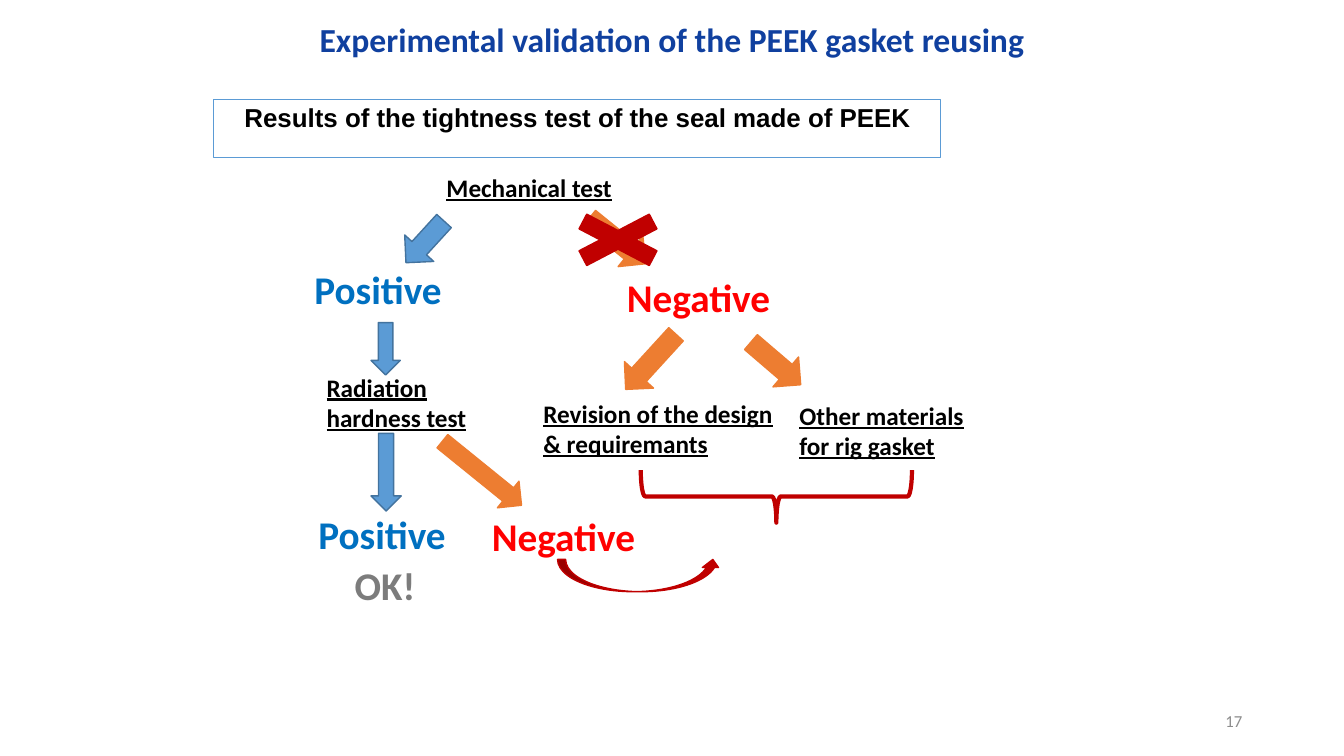
from dataclasses import dataclass

from pptx import Presentation
from pptx.dml.color import RGBColor
from pptx.enum.shapes import MSO_SHAPE
from pptx.enum.text import MSO_ANCHOR, PP_ALIGN
from pptx.util import Inches, Pt

RECT = MSO_SHAPE.RECTANGLE
DOWN = MSO_SHAPE.DOWN_ARROW
BRACE = MSO_SHAPE.RIGHT_BRACE
CURVED = MSO_SHAPE.CURVED_UP_ARROW
CROSS = MSO_SHAPE.MATH_MULTIPLY
LEFT, CENTER, RIGHT = PP_ALIGN.LEFT, PP_ALIGN.CENTER, PP_ALIGN.RIGHT
TOP, MIDDLE = MSO_ANCHOR.TOP, MSO_ANCHOR.MIDDLE


@dataclass(frozen=True)
class Theme:
    body_font: str = "Calibri"
    heading_font: str = "Arial"
    title: str = "10409F"
    black: str = "000000"
    grey: str = "7C7C7C"
    number: str = "8C8C8C"
    positive: str = "0070C0"
    negative: str = "FF0000"
    blue: str = "5B9BD5"
    blue_edge: str = "43739E"
    orange: str = "ED7D31"
    dark_red: str = "C00000"
    title_size: float = 24
    heading_size: float = 18.5
    test_size: float = 18
    result_size: float = 28
    number_size: float = 12


THEME = Theme()


def write(tf, text, size, color, font=THEME.body_font, align=LEFT,
          bold=True, underline=None):
    """Write one paragraph into a text frame and return it."""
    p = tf.paragraphs[0]
    p.alignment = align
    r = p.add_run()
    r.text = text
    r.font.name = font
    r.font.size = Pt(size)
    r.font.bold = bold
    r.font.underline = underline
    r.font.color.rgb = RGBColor.from_string(color)
    return p


def add_text(s, box, text, size, color, anchor=TOP, wrap=True, **style):
    sp = s.shapes.add_textbox(*map(Inches, box))
    tf = sp.text_frame
    tf.word_wrap = wrap
    tf.vertical_anchor = anchor
    return write(tf, text, size, color, **style)


def add_test(s, box, text):
    """Underlined name of a test or action, indented by one level."""
    p = add_text(s, box, text, THEME.test_size, THEME.black, underline=True)
    p.level = 1
    pPr = p._p.get_or_add_pPr()
    pPr.set("marL", str(Inches(0.5)))
    pPr.set("indent", "0")


def add_result(s, box, text, color, wrap=True):
    add_text(s, box, text, THEME.result_size, color, wrap=wrap)


def add_figure(s, kind, box, fill, line, width=1, rotation=0):
    sp = s.shapes.add_shape(kind, *map(Inches, box))
    sp.shadow.inherit = False
    sp.rotation = rotation
    if fill:
        sp.fill.solid()
        sp.fill.fore_color.rgb = RGBColor.from_string(fill)
    else:
        sp.fill.background()
    sp.line.color.rgb = RGBColor.from_string(line)
    sp.line.width = Pt(width)
    return sp


def add_heading(s, box, text):
    sp = add_figure(s, RECT, box, None, THEME.blue, width=0.75)
    tf = sp.text_frame
    tf.word_wrap = True
    tf.vertical_anchor = TOP
    p = write(tf, text, THEME.heading_size, THEME.black,
              font=THEME.heading_font, align=CENTER)
    p.line_spacing = 0.9


def add_positive_arrow(s, box, rotation=0):
    add_figure(s, DOWN, box, THEME.blue, THEME.blue_edge, rotation=rotation)


def add_negative_arrow(s, box, rotation):
    add_figure(s, DOWN, box, THEME.orange, THEME.orange, rotation=rotation)


def main():
    prs = Presentation()
    prs.slide_width = Inches(13.33)
    prs.slide_height = Inches(7.5)
    s = prs.slides.add_slide(prs.slide_layouts[6])

    # Title, heading and slide number
    title = add_text(s, (0, -0.01, 13.33, 0.76),
                     "Experimental validation of the PEEK gasket reusing",
                     THEME.title_size, THEME.title, anchor=MIDDLE, align=CENTER)
    title.line_spacing = Pt(32)
    add_heading(s, (2.12, 0.99, 7.21, 0.57),
                "Results of the tightness test of the seal made of PEEK")
    add_text(s, (9.42, 6.95, 3, 0.4), "17", THEME.number_size, THEME.number,
             anchor=MIDDLE, align=RIGHT, bold=False)

    # Arrows
    add_positive_arrow(s, (4.02, 2.12, 0.39, 0.56), 42.4)
    add_positive_arrow(s, (3.68, 3.2, 0.29, 0.52))
    add_positive_arrow(s, (3.68, 4.3, 0.3, 0.77))
    add_negative_arrow(s, (5.93, 2.03, 0.39, 0.72), 309)
    add_negative_arrow(s, (6.26, 3.22, 0.39, 0.74), 42.4)
    add_negative_arrow(s, (7.5, 3.28, 0.39, 0.65), 310.6)
    add_negative_arrow(s, (4.61, 4.19, 0.34, 1.01), 309)

    # Tests and follow-up actions
    add_test(s, (3.83, 1.66, 3.65, 0.4), "Mechanical test")
    add_test(s, (2.64, 3.64, 2.09, 0.71), "Radiation hardness test")
    add_test(s, (4.79, 3.9, 3.12, 0.71), "Revision of the design & requiremants")
    add_test(s, (7.33, 3.92, 2.5, 0.71), "Other materials for rig gasket")

    # Results
    add_result(s, (3.02, 2.58, 1.76, 0.57), "Positive", THEME.positive)
    add_result(s, (6.12, 2.66, 1.64, 0.57), "Negative", THEME.negative, wrap=False)
    add_result(s, (3.06, 5.01, 1.57, 0.57), "Positive", THEME.positive)
    add_result(s, (4.78, 5.03, 1.74, 0.57), "Negative", THEME.negative)
    add_result(s, (3.42, 5.52, 0.86, 0.57), "OK!", THEME.grey)

    # Brace, return arrow and crossed-out branch
    add_figure(s, BRACE, (7.44, 3.58, 0.52, 2.69), None, THEME.dark_red,
               width=3, rotation=90)
    add_figure(s, CURVED, (5.53, 5.55, 1.62, 0.32), THEME.dark_red, THEME.dark_red)
    add_figure(s, CROSS, (5.46, 2.03, 1.34, 0.7), THEME.dark_red, THEME.dark_red)

    prs.save("out.pptx")


if __name__ == "__main__":
    main()
